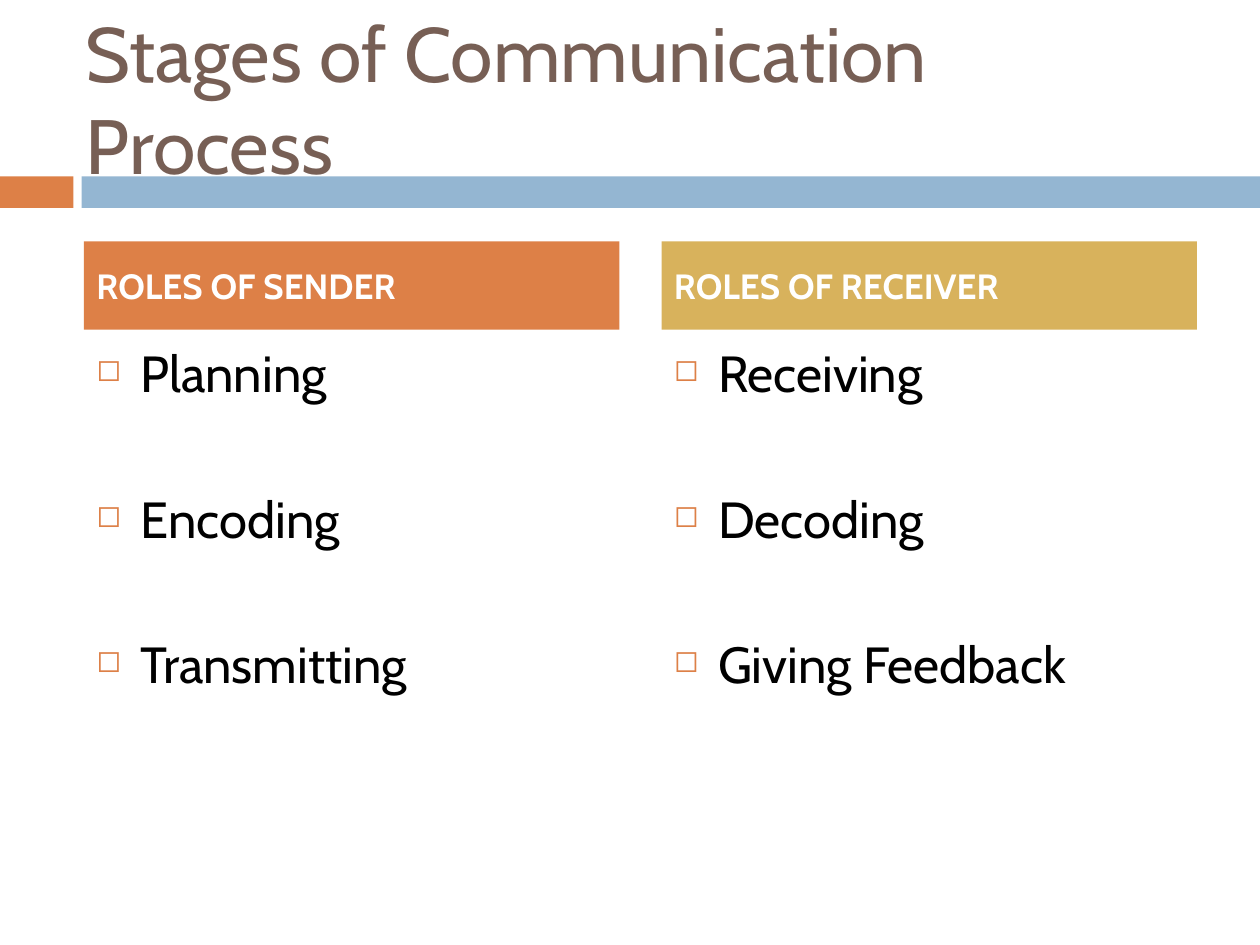
"""Build the slide on the stages of the communication process."""
import pptx
import pptx.dml.color
import pptx.enum.shapes
import pptx.enum.text
import pptx.oxml
import pptx.oxml.ns
import pptx.util

Pt = pptx.util.Pt
RGBColor = pptx.dml.color.RGBColor
MIDDLE = pptx.enum.text.MSO_ANCHOR.MIDDLE
TOP = pptx.enum.text.MSO_ANCHOR.TOP
LEFT = pptx.enum.text.PP_ALIGN.LEFT

ORANGE = RGBColor(0xDD, 0x80, 0x47)
BLUE = RGBColor(0x94, 0xB6, 0xD2)
GOLD = RGBColor(0xD8, 0xB2, 0x5C)
BROWN = RGBColor(0x77, 0x5F, 0x55)
WHITE = RGBColor(0xFF, 0xFF, 0xFF)
BLACK = RGBColor(0, 0, 0)


class SlideBuilder:
    font = "Cabin"
    bullet_indent = 25.2
    space_before = 7
    item_gap = 41.2

    def __init__(self, slide):
        self.slide = slide

    def add_text(self, paragraph, text, size, color, bold=False):
        paragraph.alignment = LEFT
        run = paragraph.add_run()
        run.text = text
        run.font.name = self.font
        run.font.size = Pt(size)
        run.font.bold = bold
        run.font.color.rgb = color

    def bar(self, left, top, width, height, fill):
        bar = self.slide.shapes.add_shape(
            pptx.enum.shapes.MSO_SHAPE.RECTANGLE,
            Pt(left), Pt(top), Pt(width), Pt(height))
        bar.shadow.inherit = False
        bar.fill.solid()
        bar.fill.fore_color.rgb = fill
        bar.line.fill.background()
        return bar

    def heading(self, left, top, width, height, text, fill):
        frame = self.bar(left, top, width, height, fill).text_frame
        frame.word_wrap = True
        frame.vertical_anchor = MIDDLE
        frame.paragraphs[0].space_before = Pt(self.space_before)
        self.add_text(frame.paragraphs[0], text, 20, WHITE, bold=True)

    def text_frame(self, left, top, width, height, anchor):
        frame = self.slide.shapes.add_textbox(
            Pt(left), Pt(top), Pt(width), Pt(height)).text_frame
        frame.word_wrap = True
        frame.vertical_anchor = anchor
        return frame

    def title(self, left, top, width, height, text):
        frame = self.text_frame(left, top, width, height, MIDDLE)
        self.add_text(frame.paragraphs[0], text, 44, BROWN)

    def bullet(self, paragraph):
        properties = paragraph._p.get_or_add_pPr()
        indent = Pt(self.bullet_indent)
        properties.set("marL", str(indent))
        properties.set("indent", str(-indent))
        namespace = pptx.oxml.ns.nsdecls("a")
        for xml in (
            f'<a:buClr {namespace}><a:srgbClr val="{ORANGE}"/></a:buClr>',
            f'<a:buSzPct {namespace} val="60000"/>',
            f'<a:buChar {namespace} char="◻"/>',
        ):
            properties.append(pptx.oxml.parse_xml(xml))

    def bullet_list(self, left, top, width, height, items):
        frame = self.text_frame(left, top, width, height, TOP)
        for index, item in enumerate(items):
            paragraph = frame.add_paragraph() if index else frame.paragraphs[0]
            paragraph.space_before = Pt(self.space_before)
            paragraph.space_after = Pt(self.item_gap)
            self.bullet(paragraph)
            self.add_text(paragraph, item, 29, BLACK)


def main():
    presentation = pptx.Presentation()
    presentation.slide_width = Pt(720)
    presentation.slide_height = Pt(540)
    builder = SlideBuilder(
        presentation.slides.add_slide(presentation.slide_layouts[6]))

    builder.bar(0, 100.8, 42, 18, ORANGE)
    builder.bar(46.6, 100.8, 673.4, 18, BLUE)
    builder.title(42, 21.6, 642, 68.4, "Stages of Communication Process")

    roles = [
        ("ROLES OF SENDER", ORANGE, ["Planning", "Encoding", "Transmitting"]),
        ("ROLES OF RECEIVER", GOLD,
         ["Receiving", "Decoding", "Giving Feedback"]),
    ]
    column_width, column_pitch = 306, 330
    for column, (heading, fill, stages) in enumerate(roles):
        left = 48 + column * column_pitch
        builder.heading(left, 138, column_width, 50.4, heading, fill)
        builder.bullet_list(left, 192, column_width, 282, stages)

    presentation.save("out.pptx")


if __name__ == "__main__":
    main()
